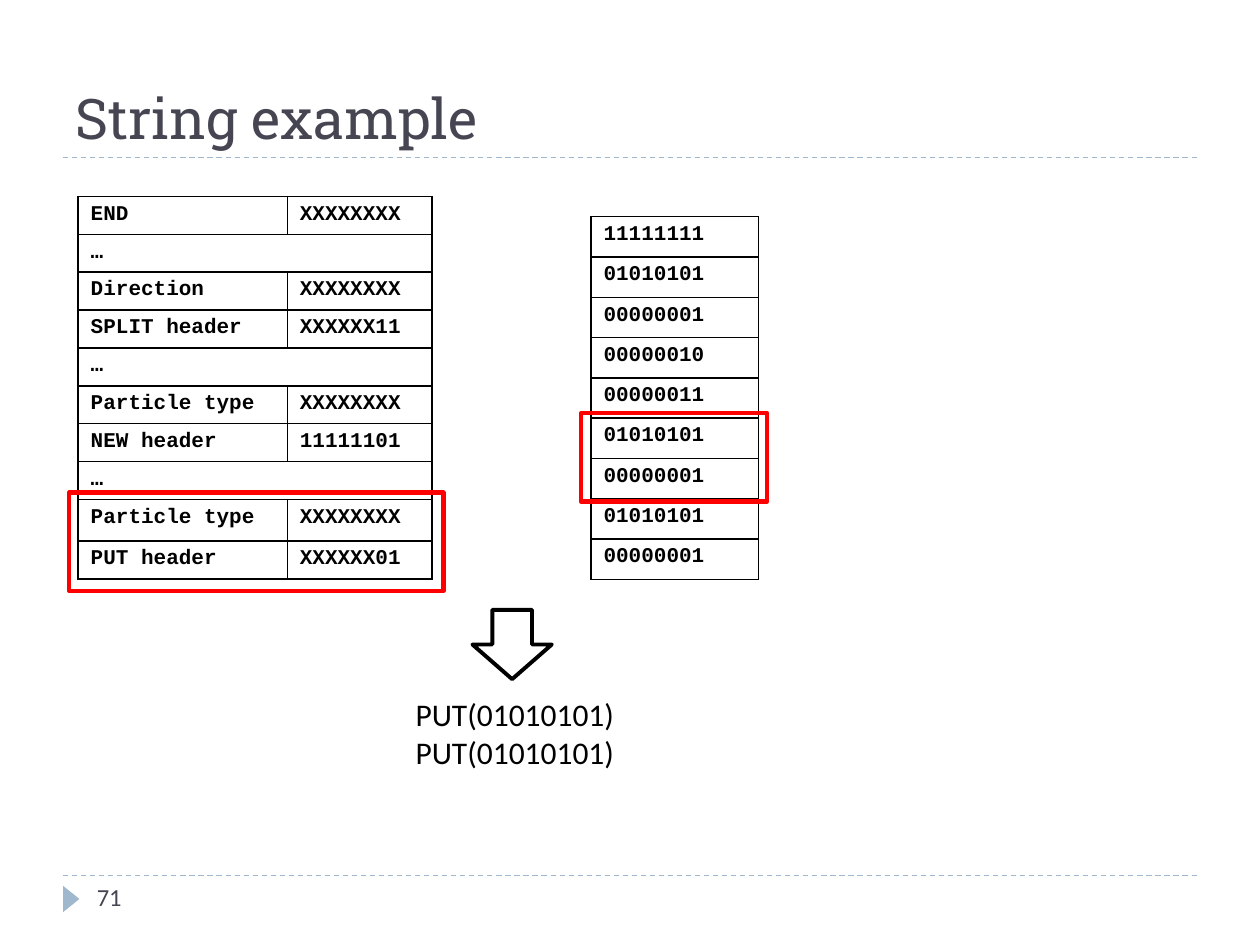
from lxml import etree
from pptx import Presentation
from pptx.dml.color import RGBColor
from pptx.enum.dml import MSO_LINE
from pptx.enum.shapes import MSO_CONNECTOR, MSO_SHAPE
from pptx.enum.text import MSO_ANCHOR, PP_ALIGN
from pptx.oxml.ns import qn
from pptx.util import Inches, Pt

DASH = MSO_LINE.DASH
STRAIGHT = MSO_CONNECTOR.STRAIGHT
RECTANGLE = MSO_SHAPE.RECTANGLE
TRIANGLE = MSO_SHAPE.ISOSCELES_TRIANGLE
DOWN_ARROW = MSO_SHAPE.DOWN_ARROW
TOP, BOTTOM = MSO_ANCHOR.TOP, MSO_ANCHOR.BOTTOM
LEFT = PP_ALIGN.LEFT

BLACK, RED, SLATE, BLUE = "000000", "FF0000", "464653", "9FB8CD"
TITLE_FONT, BODY_FONT, CODE_FONT = "Roboto Slab", "Calibri", "Courier New"


def rgb(value):
    return RGBColor.from_string(value)


class SlideBuilder:
    def __init__(self, slide):
        self.slide = slide
        self.shapes = slide.shapes

    def add_lines(self, frame, lines, size, font, color, bold=False):
        for index, line in enumerate(lines):
            paragraph = frame.paragraphs[0] if index == 0 else frame.add_paragraph()
            paragraph.alignment = LEFT
            run = paragraph.add_run()
            run.text = line
            run.font.size = Pt(size)
            run.font.name = font
            run.font.bold = bold
            run.font.color.rgb = rgb(color)

    def title(self, box, text):
        title = self.shapes.title
        title.left, title.top, title.width, title.height = map(Inches, box)
        title.text_frame.vertical_anchor = BOTTOM
        self.add_lines(title.text_frame, [text], 32, TITLE_FONT, SLATE)

    def text(self, box, lines, size, color):
        frame = self.shapes.add_textbox(*map(Inches, box)).text_frame
        frame.word_wrap = True
        frame.vertical_anchor = TOP
        self.add_lines(frame, lines, size, BODY_FONT, color)

    def rule(self, y):
        rule = self.shapes.add_connector(
            STRAIGHT, Inches(0.5), Inches(y), Inches(9.5), Inches(y))
        rule.line.color.rgb = rgb(BLUE)
        rule.line.width = Pt(0.75)
        rule.line.dash_style = DASH
        etree.SubElement(rule._element.spPr, qn("a:effectLst"))

    def shape(self, kind, box, fill=None, line=None, width=0, rotation=0):
        shape = self.shapes.add_shape(kind, *map(Inches, box))
        shape.shadow.inherit = False
        shape.rotation = rotation
        if fill:
            shape.fill.solid()
            shape.fill.fore_color.rgb = rgb(fill)
        else:
            shape.fill.background()
        if line:
            shape.line.color.rgb = rgb(line)
            shape.line.width = Pt(width)
        else:
            shape.line.fill.background()

    def border(self, cell):
        properties = cell._tc.get_or_add_tcPr()
        for side in ("a:lnL", "a:lnR", "a:lnT", "a:lnB"):
            edge = etree.SubElement(properties, qn(side), w=str(Pt(1)))
            fill = etree.SubElement(edge, qn("a:solidFill"))
            etree.SubElement(fill, qn("a:srgbClr"), val=BLACK)

    def table(self, left, top, widths, heights, rows):
        """Rows shorter than the column count span the full width."""
        table = self.shapes.add_table(
            len(rows), len(widths), Inches(left), Inches(top),
            Inches(sum(widths)), Inches(sum(heights))).table
        table.first_row = table.horz_banding = False
        for column, width in zip(table.columns, widths):
            column.width = Inches(width)
        for r, (values, height) in enumerate(zip(rows, heights)):
            table.rows[r].height = Inches(height)
            for c in range(len(widths)):
                cell = table.cell(r, c)
                self.border(cell)
                cell.fill.background()
                if c < len(values):
                    self.add_lines(cell.text_frame, [values[c]], 12, CODE_FONT,
                                   BLACK, bold=True)
            if len(values) < len(widths):
                table.cell(r, 0).merge(table.cell(r, len(widths) - 1))


def main():
    deck = Presentation()
    deck.slide_width, deck.slide_height = Inches(10), Inches(7.5)
    page = SlideBuilder(deck.slides.add_slide(deck.slide_layouts[5]))

    # Title, rules and page number
    page.rule(6.95)
    page.rule(1.25)
    page.shape(TRIANGLE, (0.46, 7.07, 0.21, 0.13), fill=BLUE, rotation=90)
    page.title((0.5, 0.17, 9, 1.08), "String example")
    page.text((0.67, 6.95, 2.17, 0.4), ["71"], 14, SLATE)

    # Instruction layout
    instructions = [
        ("END", "XXXXXXXX"),
        ("…",),
        ("Direction", "XXXXXXXX"),
        ("SPLIT header", "XXXXXX11"),
        ("…",),
        ("Particle type", "XXXXXXXX"),
        ("NEW header", "11111101"),
        ("…",),
        ("Particle type", "XXXXXXXX"),
        ("PUT header", "XXXXXX01"),
    ]
    heights = [0.29] * 8 + [0.33, 0.29]
    page.table(0.62, 1.56, [1.66, 1.15], heights, instructions)

    # Byte string
    byte_rows = [
        ("11111111",), ("01010101",), ("00000001",),
        ("00000010",), ("00000011",), ("01010101",),
        ("00000001",), ("01010101",), ("00000001",),
    ]
    page.table(4.69, 1.72, [1.33], [0.32] * len(byte_rows), byte_rows)

    # Highlighted PUT instruction and its bytes
    for highlight in ((0.55, 3.91, 2.97, 0.78), (4.61, 3.28, 1.48, 0.7)):
        page.shape(RECTANGLE, highlight, line=RED, width=2.5)

    # Decoded result
    page.text((3.2, 5.47, 2, 0.71), ["PUT(01010101)"] * 2, 18, BLACK)
    page.shape(DOWN_ARROW, (3.75, 4.84, 0.63, 0.55), line=BLACK, width=2.25)

    deck.save("out.pptx")


if __name__ == "__main__":
    main()
